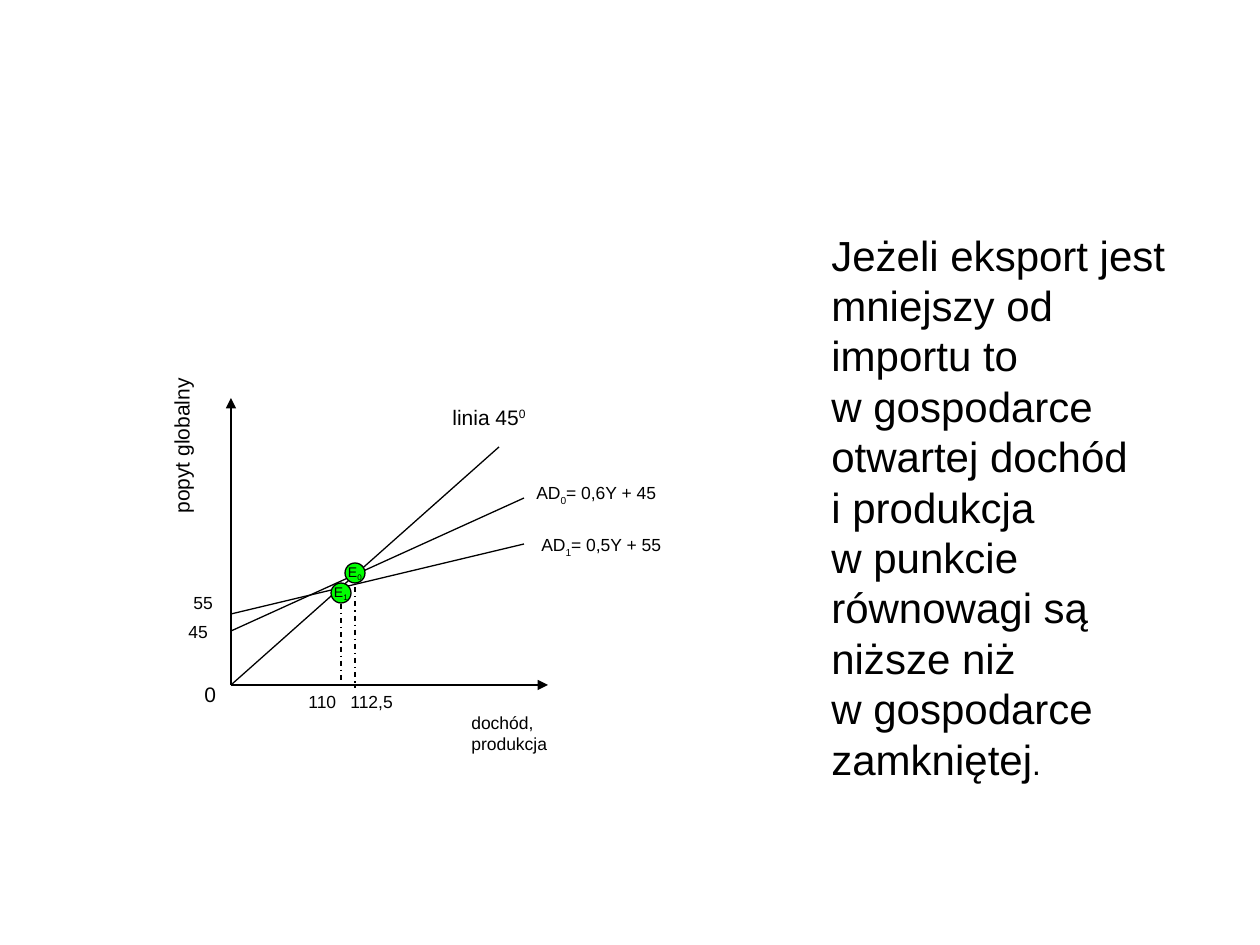
"""Build a slide on open-economy equilibrium with an aggregate demand diagram."""
from pptx import Presentation
from pptx.dml.color import RGBColor
from pptx.enum.dml import MSO_LINE
from pptx.enum.shapes import MSO_CONNECTOR, MSO_SHAPE
from pptx.enum.text import MSO_ANCHOR, PP_ALIGN
from pptx.oxml.ns import qn
from pptx.util import Pt
from lxml import etree

PX = 914400 / 126
COLORS = {"ink": RGBColor.from_string("000000"), "point": RGBColor.from_string("00FF00")}


def emu(*lengths):
    return [round(length * PX) for length in lengths]


def write(paragraph, pieces, size):
    for text, baseline in pieces:
        run = paragraph.add_run()
        run.text = text
        run.font.size = Pt(size)
        run.font.name = "Arial"
        run.font.color.rgb = COLORS["ink"]
        if baseline:
            run._r.get_or_add_rPr().set("baseline", str(baseline * 1000))


prs = Presentation()
prs.slide_width, prs.slide_height = emu(1260, 945)
slide = prs.slides.add_slide(prs.slide_layouts[6])

origin_x, origin_y = 231, 685
lines = [
    (origin_x, origin_y, 231, 398, "axis"),
    (origin_x, origin_y, 548, 685, "axis"),
    (origin_x, origin_y, 499, 447, "curve"),
    (origin_x, 631, 524, 498, "curve"),
    (origin_x, 614, 524, 544, "curve"),
    (355, 573, 355, 688, "guide"),
    (341, 604, 341, 685, "guide"),
]
for x1, y1, x2, y2, role in lines:
    line = slide.shapes.add_connector(MSO_CONNECTOR.STRAIGHT, *emu(x1, y1, x2, y2))
    line.line.color.rgb = COLORS["ink"]
    line.line.width = Pt(0.75)
    if role == "guide":
        line.line.dash_style = MSO_LINE.DASH_DOT
    if role == "axis":
        etree.SubElement(line.line._get_or_add_ln(), qn("a:tailEnd"), type="triangle")
    etree.SubElement(line._element.spPr, qn("a:effectLst"))

for left, top, index in [(345, 563, "0"), (331, 583, "1")]:
    equilibrium = slide.shapes.add_shape(MSO_SHAPE.OVAL, *emu(left, top, 20, 20))
    equilibrium.shadow.inherit = False
    equilibrium.fill.solid()
    equilibrium.fill.fore_color.rgb = COLORS["point"]
    equilibrium.line.color.rgb = COLORS["ink"]
    equilibrium.line.width = Pt(0.75)
    frame = equilibrium.text_frame
    frame.word_wrap = False
    frame.vertical_anchor = MSO_ANCHOR.MIDDLE
    frame.paragraphs[0].alignment = PP_ALIGN.CENTER
    write(frame.paragraphs[0], [("E", 0), (index, -25)], 8)

labels = [
    (459, 706, 129, 55, 10, [("dochód, produkcja", 0)]),
    (192, 675, 49, 38, 12, [("0", 0)]),
    (440, 398, 118, 38, 12, [("linia 45", 0), ("0", 30)]),
    (338, 685, 72, 34, 10, [("112,5", 0)]),
    (296, 685, 59, 34, 10, [("110", 0)]),
    (176, 615, 54, 34, 10, [("45", 0)]),
    (181, 586, 49, 34, 10, [("55", 0)]),
    (524, 476, 149, 34, 10, [("AD", 0), ("0", -25), ("= 0,6Y + 45", 0)]),
    (529, 528, 149, 34, 10, [("AD", 0), ("1", -25), ("= 0,5Y + 55", 0)]),
]
for left, top, width, height, size, pieces in labels:
    label = slide.shapes.add_textbox(*emu(left, top, width, height))
    label.text_frame.word_wrap = True
    write(label.text_frame.paragraphs[0], pieces, size)

demand = slide.shapes.add_textbox(*emu(78, 402, 198, 50))
demand.rotation = 270
demand.text_frame.word_wrap = True
write(demand.text_frame.paragraphs[0], [("popyt globalny", 0)], 12)
write(demand.text_frame.paragraphs[0], [(" ", 0)], 18)

conclusion = slide.shapes.add_textbox(*emu(819, 223, 367, 572))
conclusion.text_frame.word_wrap = True
statement = conclusion.text_frame.paragraphs[0]
statement_lines = [
    "Jeżeli eksport jest mniejszy od importu to ",
    "w gospodarce otwartej dochód ",
    "i produkcja ",
    "w punkcie równowagi są niższe niż ",
    "w gospodarce zamkniętej",
]
for number, text in enumerate(statement_lines):
    if number:
        statement.add_line_break()
    write(statement, [(text, 0)], 24)
write(statement, [(".", 0)], 18)

prs.save("out.pptx")
